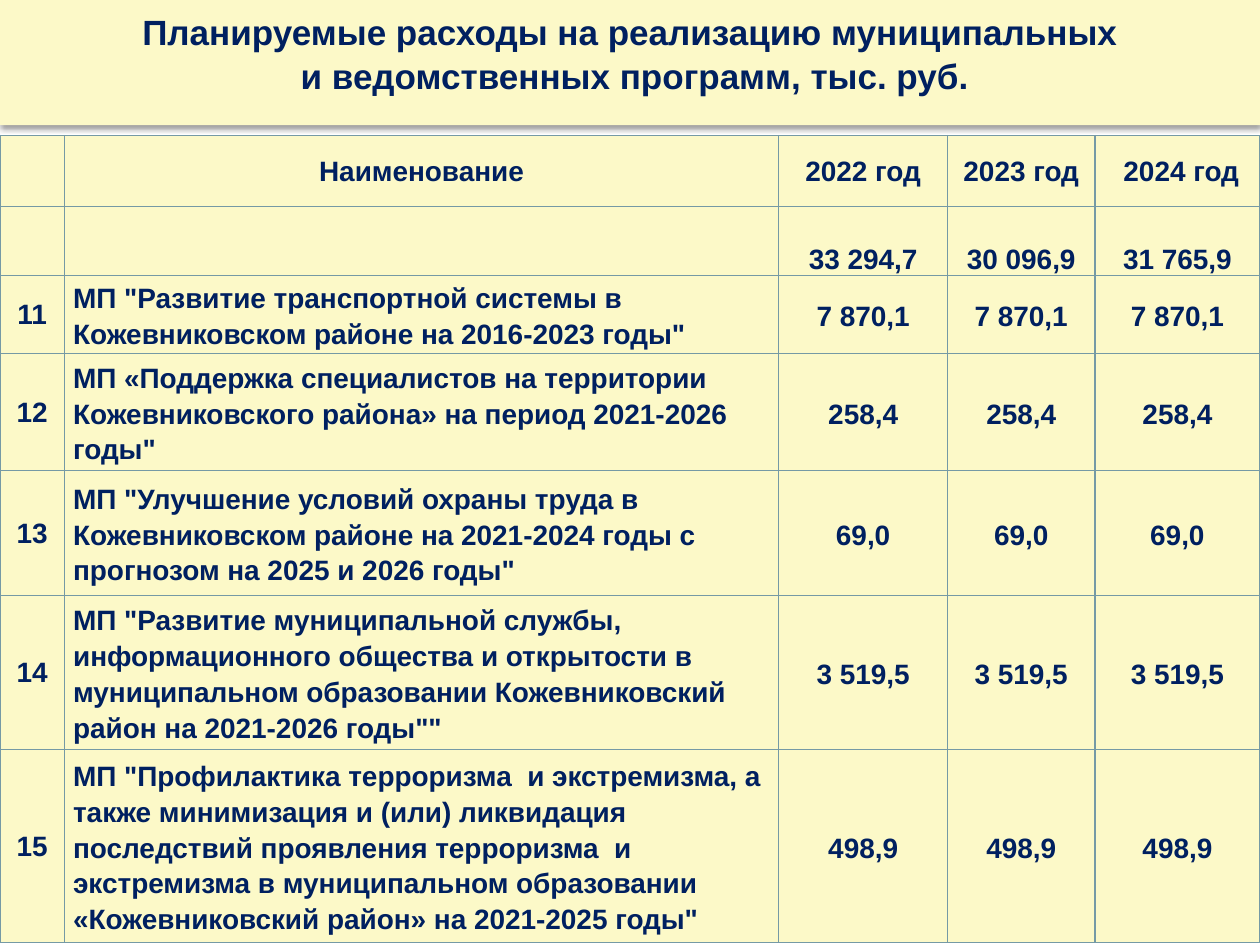
from lxml.etree import SubElement
from pptx import Presentation
from pptx.dml.color import RGBColor
from pptx.enum.text import MSO_ANCHOR as Anchor, MSO_AUTO_SIZE as AutoSize, PP_ALIGN as Align
from pptx.oxml import parse_xml
from pptx.oxml.ns import nsdecls, qn
from pptx.util import Pt

NAVY = RGBColor(0x00, 0x20, 0x60)
CREAM = RGBColor(0xFC, 0xF9, 0xC8)
BORDER = RGBColor(0x75, 0x9A, 0xA5)

SLIDE_WIDTH, SLIDE_HEIGHT = 720, 540
TITLE_HEIGHT = 71.5
TABLE_TOP = 77.5
COLUMN_WIDTHS = [36.8, 408.2, 96.5, 84.2, 94.3]
ROW_HEIGHTS = [40.5, 39.5, 44.6, 66.9, 71.4, 88, 110.3]
TIGHT = (0.7, 0.7, 0.7, 0)
WIDE = (5, 0, 5, 0)

TITLE = ["Планируемые расходы на реализацию муниципальных",
         " и ведомственных программ, тыс. руб."]
HEADER = ["", "Наименование", "2022 год", "2023 год", " 2024 год"]
TOTALS = ["", "", "33 294,7", "30 096,9", "31 765,9"]
# Each programme has the same planned cost in all three years.
PROGRAMMES = [
    ("11", 'МП "Развитие транспортной системы в Кожевниковском районе на 2016-2023 годы"',
     "7 870,1"),
    ("12", 'МП «Поддержка специалистов на территории Кожевниковского района» '
           'на период 2021-2026 годы"', "258,4"),
    ("13", 'МП "Улучшение условий охраны труда в Кожевниковском районе на 2021-2024 годы '
           'с прогнозом на 2025 и 2026 годы"', "69,0"),
    ("14", 'МП "Развитие муниципальной службы, информационного общества и открытости '
           'в муниципальном образовании Кожевниковский район на 2021-2026 годы""', "3 519,5"),
    ("15", 'МП "Профилактика терроризма  и экстремизма, а также минимизация и (или) ликвидация '
           'последствий проявления терроризма  и экстремизма в муниципальном образовании '
           '«Кожевниковский район» на 2021-2025 годы"', "498,9"),
]


def write_text(frame, lines, size=16, align=Align.CENTER, spacing=1.0):
    for index, line in enumerate(lines):
        paragraph = frame.paragraphs[0] if index == 0 else frame.add_paragraph()
        paragraph.alignment = align
        paragraph.line_spacing = spacing
        paragraph.space_before = Pt(0)
        run = paragraph.add_run()
        run.text = line
        run.font.name = "Arial"
        run.font.size = Pt(size)
        run.font.bold = True
        run.font.color.rgb = NAVY


def set_margins(target, margins):
    """Apply left, top, right and bottom margins to a cell or text frame."""
    for side, value in zip(("left", "top", "right", "bottom"), margins):
        setattr(target, f"margin_{side}", Pt(value))


def add_borders(cell):
    properties = cell._tc.get_or_add_tcPr()
    for index, side in enumerate(("lnL", "lnR", "lnT", "lnB")):
        line = parse_xml(f'<a:{side} {nsdecls("a")} w="{Pt(1)}"/>')
        fill = SubElement(line, qn("a:solidFill"))
        SubElement(fill, qn("a:srgbClr"), val=str(BORDER))
        properties.insert(index, line)


def add_shadow(shape):
    shape._element.spPr.append(parse_xml(
        f'<a:effectLst {nsdecls("a")}><a:outerShdw blurRad="{Pt(3.1)}" dist="{Pt(2)}" '
        'dir="5400000" rotWithShape="0"><a:srgbClr val="000000"><a:alpha val="38000"/>'
        '</a:srgbClr></a:outerShdw></a:effectLst>'))


def fill_cell(cell, text, margins=TIGHT, anchor=Anchor.MIDDLE, **text_format):
    set_margins(cell, margins)
    cell.vertical_anchor = anchor
    cell.fill.solid()
    cell.fill.fore_color.rgb = CREAM
    add_borders(cell)
    if text:
        write_text(cell.text_frame, [text], **text_format)


def add_cost_table(slide):
    table = slide.shapes.add_table(
        len(ROW_HEIGHTS), len(COLUMN_WIDTHS), Pt(0), Pt(TABLE_TOP),
        Pt(SLIDE_WIDTH), Pt(sum(ROW_HEIGHTS))).table
    table.first_row = table.horz_banding = False
    for column, width in zip(table.columns, COLUMN_WIDTHS):
        column.width = Pt(width)
    for row, height in zip(table.rows, ROW_HEIGHTS):
        row.height = Pt(height)
    for column, (heading, total) in enumerate(zip(HEADER, TOTALS)):
        fill_cell(table.cell(0, column), heading)
        fill_cell(table.cell(1, column), total, anchor=Anchor.BOTTOM)
    for row, (number, name, cost) in enumerate(PROGRAMMES, start=2):
        fill_cell(table.cell(row, 0), number)
        fill_cell(table.cell(row, 1), name, WIDE, align=Align.LEFT, spacing=1.15)
        for column in range(2, len(COLUMN_WIDTHS)):
            fill_cell(table.cell(row, column), cost, WIDE, spacing=1.15)


def format_title(slide):
    title = slide.shapes.title
    title.left, title.top = Pt(0), Pt(0)
    title.width, title.height = Pt(SLIDE_WIDTH), Pt(TITLE_HEIGHT)
    title.fill.solid()
    title.fill.fore_color.rgb = CREAM
    add_shadow(title)
    frame = title.text_frame
    frame.word_wrap = True
    frame.auto_size = AutoSize.NONE
    frame.vertical_anchor = Anchor.TOP
    set_margins(frame, (7.2, 5, 7.2, 3.6))
    write_text(frame, TITLE, size=20, spacing=1.04)
    slide.shapes._spTree.append(title._element)  # bring the banner in front of the table


def main():
    presentation = Presentation()
    presentation.slide_width = Pt(SLIDE_WIDTH)
    presentation.slide_height = Pt(SLIDE_HEIGHT)
    slide = presentation.slides.add_slide(presentation.slide_layouts[5])
    add_cost_table(slide)
    format_title(slide)
    presentation.save("out.pptx")


if __name__ == "__main__":
    main()
